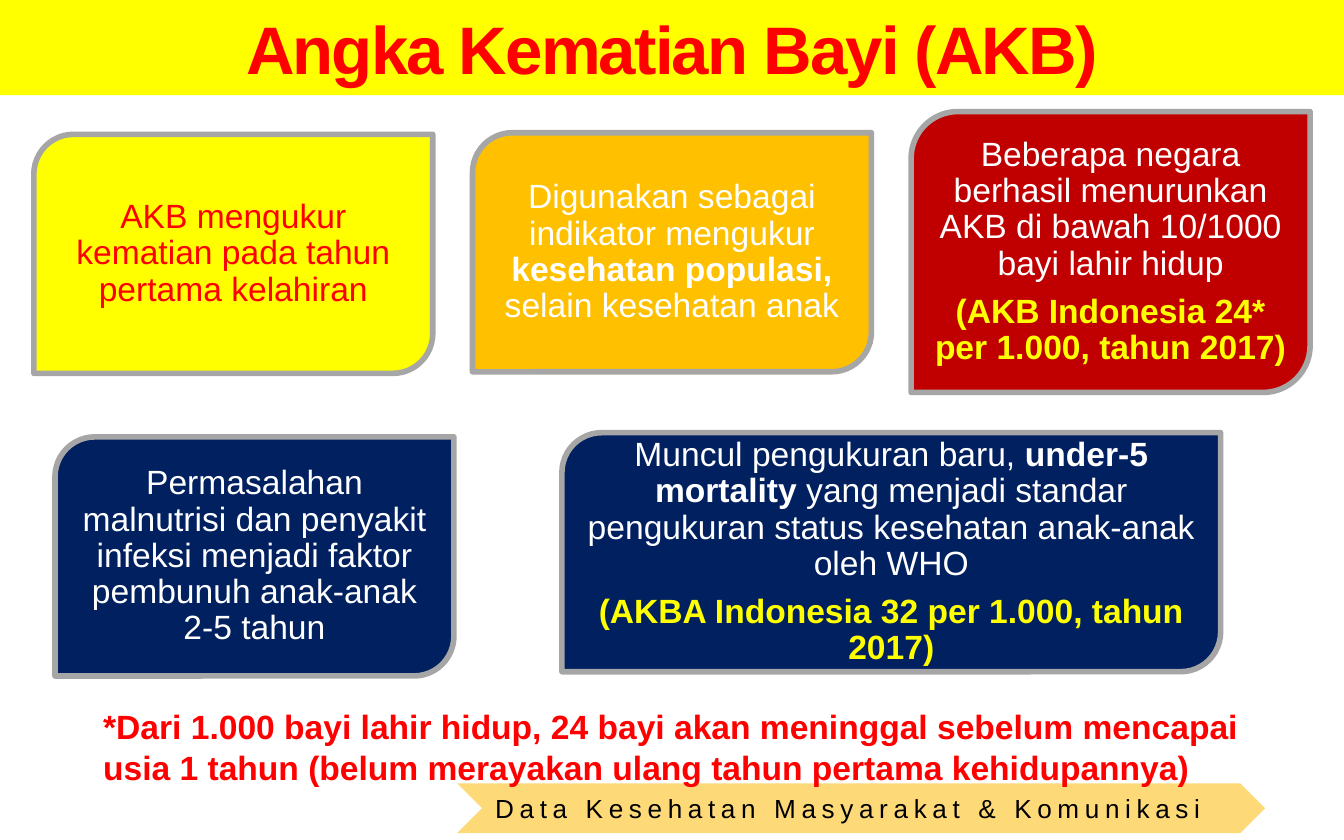
"""Build the slide on infant mortality (Angka Kematian Bayi)."""
from pptx import Presentation
from pptx.dml.color import RGBColor
from pptx.enum.shapes import MSO_SHAPE
from pptx.enum.text import MSO_ANCHOR, PP_ALIGN
from pptx.util import Cm, Pt

RECT = MSO_SHAPE.RECTANGLE
CHEVRON = MSO_SHAPE.CHEVRON
ROUND = MSO_SHAPE.ROUND_2_DIAG_RECTANGLE
MIDDLE = MSO_ANCHOR.MIDDLE
CENTER = PP_ALIGN.CENTER
JUSTIFY = PP_ALIGN.JUSTIFY

YELLOW = RGBColor(0xFF, 0xFF, 0x00)
AMBER = RGBColor(0xFF, 0xC0, 0x00)
SAND = RGBColor(0xFD, 0xD9, 0x78)
RED = RGBColor(0xFF, 0x00, 0x00)
CRIMSON = RGBColor(0xC0, 0x00, 0x00)
NAVY = RGBColor(0x00, 0x20, 0x60)
GREY = RGBColor(0xA6, 0xA6, 0xA6)
WHITE = RGBColor(0xFF, 0xFF, 0xFF)
BLACK = RGBColor(0x00, 0x00, 0x00)

deck = Presentation()
deck.slide_width, deck.slide_height = Cm(25.4), Cm(15.88)
slide = deck.slides.add_slide(deck.slide_layouts[6])


def add_box(kind, left, top, width, height, fill):
    box = slide.shapes.add_shape(kind, Cm(left), Cm(top), Cm(width), Cm(height))
    box.shadow.inherit = False
    box.fill.solid()
    box.fill.fore_color.rgb = fill
    box.line.fill.background()
    box.text_frame.vertical_anchor = MIDDLE
    return box


def style(run, size, color, bold=False, space=0):
    run.font.name = "Arial"
    run.font.size = Pt(size)
    run.font.color.rgb = color
    run.font.bold = bold
    if space:
        run.font._element.set("spc", str(space * 100))


banners = [
    (CHEVRON, 8.64, 14.81, 15.27, 0.94, SAND, JUSTIFY,
     "Data Kesehatan Masyarakat & Komunikasi", 14, BLACK, False, 3),
    (RECT, 0, 0, 25.4, 1.8, YELLOW, CENTER,
     "Angka Kematian Bayi (AKB)", 36, RED, True, -1),
]
for kind, left, top, width, height, fill, align, text, *look in banners:
    frame = add_box(kind, left, top, width, height, fill).text_frame
    frame.text = text
    frame.paragraphs[0].alignment = align
    style(frame.paragraphs[0].runs[0], *look)

WIDE, TALL = 7.54, 4.52
LEFT, STEP = 0.64, 8.29
cards = [
    (LEFT, 2.54, WIDE, TALL, YELLOW, [
        [("AKB mengukur kematian pada tahun pertama kelahiran", RED, False)]]),
    (LEFT + STEP, 2.51, WIDE, TALL, AMBER, [
        [("Digunakan sebagai indikator mengukur ", WHITE, False),
         ("kesehatan populasi, ", WHITE, True),
         ("selain kesehatan anak", WHITE, False)]]),
    (LEFT + 2 * STEP, 2.11, WIDE, 5.31, CRIMSON, [
        [("Beberapa negara berhasil menurunkan AKB di bawah 10/1000 "
          "bayi lahir hidup", WHITE, False)],
        [("(AKB Indonesia 24* per 1.000, tahun 2017)", YELLOW, True)]]),
    (1.04, 8.26, WIDE, TALL, NAVY, [
        [("Permasalahan malnutrisi dan penyakit infeksi menjadi faktor "
          "pembunuh anak-anak 2-5 tahun", WHITE, False)]]),
    (10.62, 8.18, 12.45, TALL, NAVY, [
        [("Muncul pengukuran baru, ", WHITE, False),
         ("under-5 mortality ", WHITE, True),
         ("yang menjadi standar pengukuran status kesehatan anak-anak "
          "oleh WHO", WHITE, False)],
        [("(AKBA Indonesia 32 per 1.000, tahun 2017)", YELLOW, True)]]),
]
for left, top, width, height, fill, paras in cards:
    card = add_box(ROUND, left, top, width, height, fill)
    card.line.color.rgb = GREY
    card.line.width = Pt(3)
    frame = card.text_frame
    frame.margin_left = frame.margin_right = Cm(0.18)
    frame.margin_top = frame.margin_bottom = Cm(0.18)
    for index, parts in enumerate(paras):
        para = frame.add_paragraph() if index else frame.paragraphs[0]
        para.alignment = CENTER
        para.line_spacing = 0.9
        para.space_after = Pt(6.3)
        for text, color, bold in parts:
            run = para.add_run()
            run.text = text
            style(run, 18, color, bold)

note = slide.shapes.add_textbox(Cm(1.7), Cm(13.23), Cm(22.23), Cm(1.8))
note.text_frame.word_wrap = True
note.text_frame.text = (
    "*Dari 1.000 bayi lahir hidup, 24 bayi akan meninggal sebelum mencapai "
    "usia 1 tahun (belum merayakan ulang tahun pertama kehidupannya)")
style(note.text_frame.paragraphs[0].runs[0], 18, RED, True)

deck.save("out.pptx")
